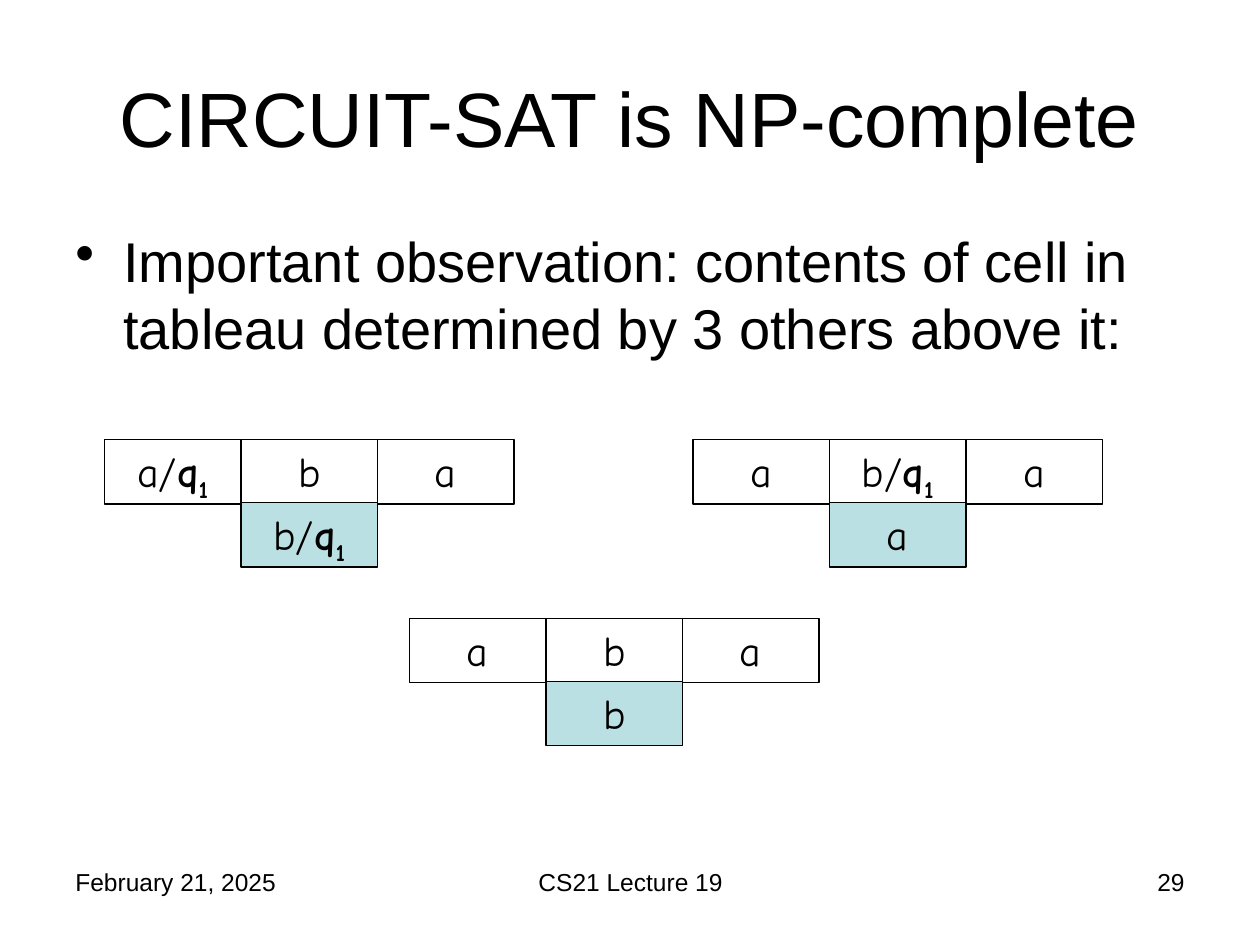
"""Build a slide showing how three tableau cells determine the one below."""
from lxml import etree
from pptx import Presentation
from pptx import util as u
from pptx.dml.color import RGBColor
from pptx.enum import shapes, text
from pptx.oxml.ns import qn

COLORS = {"ink": "000000", "result": "BBE0E3"}
ALIGN = text.PP_ALIGN
ANCHOR = text.MSO_ANCHOR
CELL_WIDTH = 13 / 12
CELL_HEIGHT = 0.51
ROW_STEP = 0.5
STATE = "q1"
WINDOWS = [
    (0.83, 3.49, ["a/q1", "b", "a"], "b/q1"),
    (5.5, 3.49, ["a", "b/q1", "a"], "a"),
    (3.25, 4.91, ["a", "b", "a"], "b"),
]
FOOTERS = [
    (0.5, 2.33, "February 21, 2025", ALIGN.LEFT),
    (3.42, 3.17, "CS21 Lecture 19", ALIGN.CENTER),
    (7.17, 2.33, "29", ALIGN.RIGHT),
]


def color(name):
    return RGBColor.from_string(COLORS[name])


def add_span(para, words, size, font="Arial", bold=False, subscript=False):
    span = para.add_run()
    span.text = words
    look = {"name": font, "size": u.Pt(size), "bold": bold}
    for key, value in look.items():
        setattr(span.font, key, value)
    span.font.color.rgb = color("ink")
    if subscript:
        span.font._element.set("baseline", "-25000")


def add_text(page, place, words, size, align, anchor=ANCHOR.TOP):
    box = page.shapes.add_textbox(*map(u.Inches, place))
    box.text_frame.word_wrap = True
    box.text_frame.vertical_anchor = anchor
    para = box.text_frame.paragraphs[0]
    para.alignment = align
    add_span(para, words, size)
    return para


def add_bullet(para):
    props = para._p.get_or_add_pPr()
    props.set("marL", str(u.Inches(0.38)))
    props.set("indent", str(-u.Inches(0.38)))
    etree.SubElement(props, qn("a:buChar")).set("char", "•")


def add_cell(page, left, top, label, fill=None):
    place = (left, top, CELL_WIDTH, CELL_HEIGHT)
    cell = page.shapes.add_shape(shapes.MSO_SHAPE.RECTANGLE, *map(u.Inches, place))
    cell.shadow.inherit = False
    cell.line.color.rgb = color("ink")
    cell.line.width = u.Pt(0.75)
    if fill:
        cell.fill.solid()
        cell.fill.fore_color.rgb = color(fill)
    else:
        cell.fill.background()
    cell.text_frame.word_wrap = True
    cell.text_frame.vertical_anchor = ANCHOR.TOP
    para = cell.text_frame.paragraphs[0]
    para.alignment = ALIGN.CENTER
    symbol, state, _ = label.partition(STATE)
    add_span(para, symbol, 24, "Comic Neue")
    if state:
        add_span(para, "q", 24, "Comic Neue", bold=True)
        add_span(para, "1", 24, "Comic Neue", bold=True, subscript=True)


def add_window(page, left, top, above, below):
    for column, label in enumerate(above):
        add_cell(page, left + column * CELL_WIDTH, top, label)
    add_cell(page, left + CELL_WIDTH, top + ROW_STEP, below, "result")


def main():
    deck = Presentation()
    deck.slide_width, deck.slide_height = u.Inches(10), u.Inches(7.5)
    page = deck.slides.add_slide(deck.slide_layouts[6])
    add_text(page, (0.5, 0.3, 9, 1.25), "CIRCUIT-SAT is NP-complete", 44,
             ALIGN.CENTER, ANCHOR.MIDDLE)
    observation = add_text(
        page, (0.5, 1.75, 9, 1.25),
        "Important observation: contents of cell in tableau determined by 3 others above it:",
        32, ALIGN.LEFT)
    add_bullet(observation)
    for window in WINDOWS:
        add_window(page, *window)
    for left, width, words, align in FOOTERS:
        add_text(page, (left, 6.83, width, 0.52), words, 14, align)
    deck.save("out.pptx")


if __name__ == "__main__":
    main()
